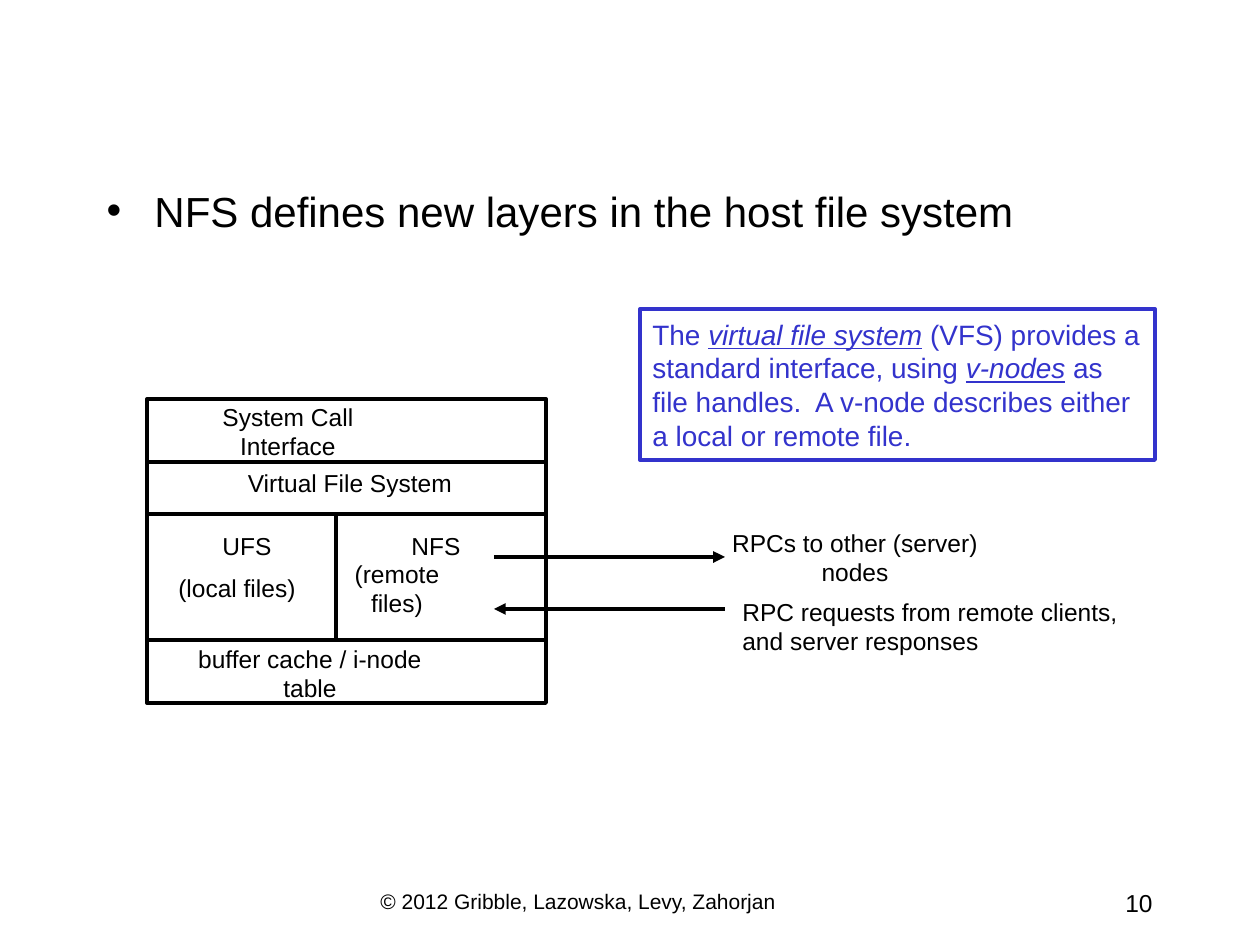
from dataclasses import dataclass

from lxml import etree
from pptx import Presentation
from pptx.dml.color import RGBColor
from pptx.enum.shapes import MSO_CONNECTOR, MSO_SHAPE
from pptx.enum.text import MSO_ANCHOR, PP_ALIGN
from pptx.oxml.ns import qn
from pptx.util import Emu, Inches, Pt

LEFT, CENTER, RIGHT = PP_ALIGN.LEFT, PP_ALIGN.CENTER, PP_ALIGN.RIGHT
TOP, MIDDLE = MSO_ANCHOR.TOP, MSO_ANCHOR.MIDDLE
STRAIGHT, RECTANGLE = MSO_CONNECTOR.STRAIGHT, MSO_SHAPE.RECTANGLE
COLORS = {"ink": "000000", "note": "3333CC"}
EMPHASIS = {"italic": True, "underline": True}
LINE_WIDTH = Pt(2.25)
LABEL_HEIGHT = 42


@dataclass
class Label:
    text: str
    left: int
    top: int
    width: int
    height: int = LABEL_HEIGHT
    size: int = 14
    align: PP_ALIGN = CENTER
    anchor: MSO_ANCHOR = MIDDLE


@dataclass
class Rule:
    x1: int
    y1: int
    x2: int
    y2: int
    arrow: str = ""


def px(length: int) -> Emu:
    return Emu(round(length * 914400 / 126))


def color(name: str) -> RGBColor:
    return RGBColor.from_string(COLORS[name])


def add_run(paragraph, text: str, size: int, ink: str = "ink", **formats) -> None:
    run = paragraph.add_run()
    run.text = text
    values = {"name": "Arial", "size": Pt(size), **formats}
    for attribute, value in values.items():
        setattr(run.font, attribute, value)
    run.font.color.rgb = color(ink)


def add_label(shapes, label: Label) -> None:
    box = shapes.add_textbox(px(label.left), px(label.top), px(label.width), px(label.height))
    frame = box.text_frame
    frame.word_wrap = True
    frame.vertical_anchor = label.anchor
    frame.paragraphs[0].alignment = label.align
    add_run(frame.paragraphs[0], label.text, label.size)


def add_rule(shapes, rule: Rule) -> None:
    line = shapes.add_connector(STRAIGHT, px(rule.x1), px(rule.y1), px(rule.x2), px(rule.y2))
    line.line.color.rgb = color("ink")
    line.line.width = LINE_WIDTH
    if rule.arrow:
        etree.SubElement(line.line._get_or_add_ln(), qn(f"a:{rule.arrow}"), type="triangle")
    etree.SubElement(line._element.spPr, qn("a:effectLst"))


def add_frame(shapes, left: int, top: int, width: int, height: int, ink: str):
    frame = shapes.add_shape(RECTANGLE, px(left), px(top), px(width), px(height))
    frame.shadow.inherit = False
    frame.fill.background()
    frame.line.color.rgb = color(ink)
    frame.line.width = LINE_WIDTH
    return frame


def add_statement(slide, text: str) -> None:
    title, body = slide.placeholders
    title._element.getparent().remove(title._element)
    body.left, body.top, body.width, body.height = px(94), px(179), px(1071), px(683)
    paragraph = body.text_frame.paragraphs[0]
    add_run(paragraph, text, 24)
    properties = paragraph._p.get_or_add_pPr()
    properties.set("marL", str(Inches(0.38)))
    properties.set("indent", str(-Inches(0.38)))
    etree.SubElement(properties, qn("a:buChar"), char="•")


def add_note(shapes) -> None:
    note = add_frame(shapes, 640, 309, 515, 151, "note")
    frame = note.text_frame
    frame.word_wrap = True
    frame.vertical_anchor = MIDDLE
    paragraph = frame.paragraphs[0]
    paragraph.alignment = LEFT
    for text, formats in (
        ("The ", {}),
        ("virtual file system", EMPHASIS),
        (" (VFS) provides a standard interface, using ", {}),
        ("v-nodes", EMPHASIS),
        (" as file handles.  A v-node describes either a local or remote file.", {}),
    ):
        add_run(paragraph, text, 16, "note", **formats)


STACK_LEFT, STACK_TOP, STACK_RIGHT, STACK_BOTTOM = 147, 399, 546, 703
VFS_TOP, STORES_TOP, CACHE_TOP = 462, 514, 640
STORE_DIVIDER = 336
ARROW_LEFT, ARROW_RIGHT = 494, 725

RULES = [
    *(Rule(STACK_LEFT, y, STACK_RIGHT, y) for y in (VFS_TOP, STORES_TOP, CACHE_TOP)),
    Rule(STORE_DIVIDER, STORES_TOP, STORE_DIVIDER, CACHE_TOP),
    Rule(ARROW_LEFT, 557, ARROW_RIGHT, 557, "tailEnd"),
    Rule(ARROW_LEFT, 609, ARROW_RIGHT, 609, "headEnd"),
]

LABELS = [
    Label("© 2012 Gribble, Lazowska, Levy, Zahorjan", 368, 882, 525, size=12, align=LEFT, anchor=TOP),
    Label("10", 903, 882, 262, align=RIGHT, anchor=TOP),
    Label("System Call Interface", 188, 410, 200),
    Label("Virtual File System", 230, 462, 240),
    Label("buffer cache / i-node table", 172, 652, 276),
    Label("(local files)", 164, 567, 146),
    Label("(remote files)", 329, 567, 136),
    Label("UFS", 210, 525, 74),
    Label("NFS", 399, 525, 74),
    Label("RPCs to other (server) nodes", 705, 536, 300),
    Label("RPC requests from remote clients, and server responses", 730, 590, 415, 72, align=LEFT),
]


def main() -> None:
    deck = Presentation()
    deck.slide_width, deck.slide_height = Inches(10), Inches(7.5)
    slide = deck.slides.add_slide(deck.slide_layouts[1])
    add_statement(slide, "NFS defines new layers in the host file system")
    add_frame(slide.shapes, STACK_LEFT, STACK_TOP, STACK_RIGHT - STACK_LEFT, STACK_BOTTOM - STACK_TOP, "ink")
    for rule in RULES:
        add_rule(slide.shapes, rule)
    for label in LABELS:
        add_label(slide.shapes, label)
    add_note(slide.shapes)
    deck.save("out.pptx")


if __name__ == "__main__":
    main()
